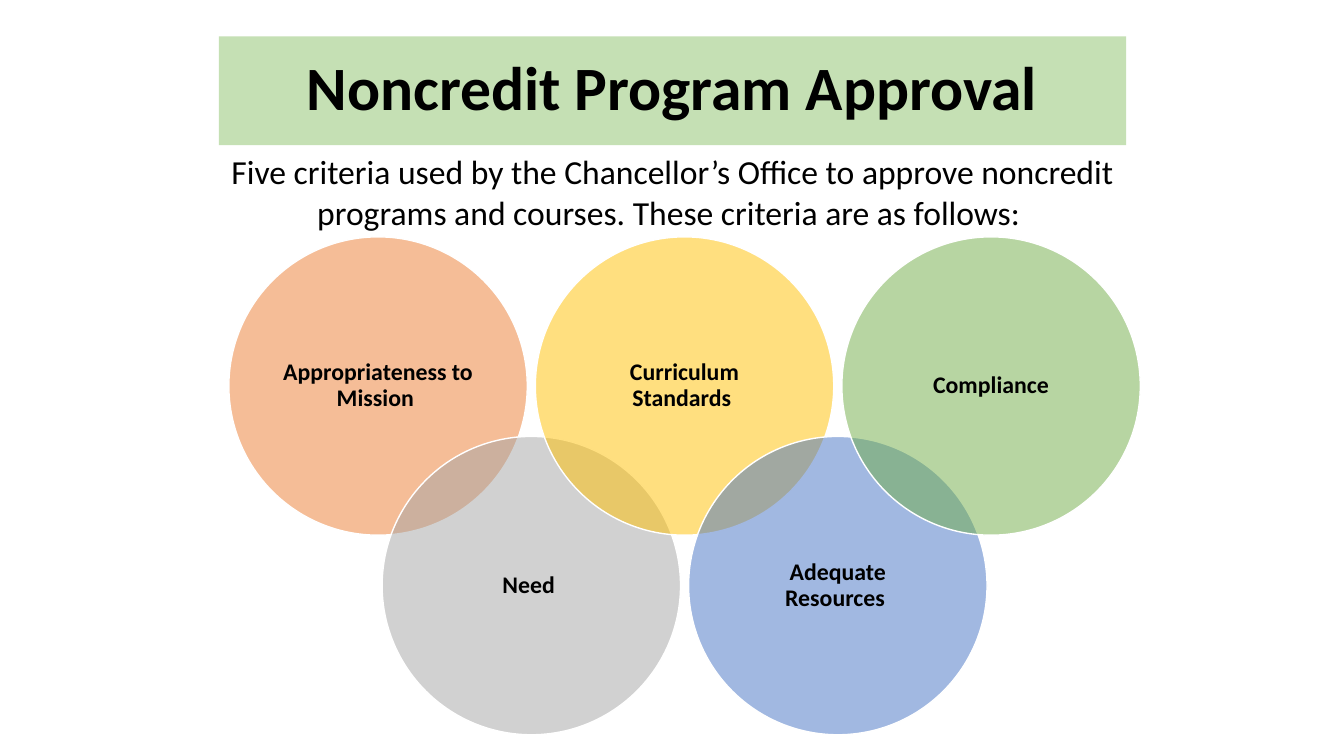
import dataclasses

import pptx
import pptx.dml.color
import pptx.enum.shapes
import pptx.enum.text
import pptx.oxml
import pptx.oxml.ns
import pptx.util

Inches = pptx.util.Inches
Pt = pptx.util.Pt


@dataclasses.dataclass(frozen=True)
class Theme:
    font: str = "Calibri"
    text: str = "000000"
    outline: str = "FFFFFF"
    banner: str = "C5E0B4"
    title_size: int = 44
    intro_size: int = 24
    label_size: int = 17
    opacity: int = 50  # percent


THEME = Theme()

# Circles interlock: even columns sit in the upper row, odd ones in the lower.
LEFT, TOP = 2.27, 2.35
COLUMN, ROW = 1.52, 1.98
DIAMETER = 2.96

CRITERIA = [
    ("Appropriateness to Mission ", "ED7D31"),
    ("Need ", "A5A5A5"),
    ("Curriculum Standards ", "FFC000"),
    ("Adequate Resources ", "4472C4"),
    ("Compliance", "70AD47"),
]


def rgb(value):
    return pptx.dml.color.RGBColor.from_string(value)


def place(s, left, top, width, height):
    s.left, s.top = Inches(left), Inches(top)
    s.width, s.height = Inches(width), Inches(height)


def fill_solid(s, color):
    s.fill.solid()
    s.fill.fore_color.rgb = rgb(color)


def set_opacity(s, percent):
    color = s.element.spPr.find(".//" + pptx.oxml.ns.qn("a:srgbClr"))
    alpha = pptx.oxml.parse_xml(
        f'<a:alpha {pptx.oxml.ns.nsdecls("a")} val="{percent * 1000}"/>')
    color.append(alpha)


def write(s, text, size, anchor, bold=False, spacing=1.0):
    tf = s.text_frame
    tf.word_wrap = True
    tf.vertical_anchor = anchor
    p = tf.paragraphs[0]
    p.text = text
    p.alignment = pptx.enum.text.PP_ALIGN.CENTER
    p.line_spacing = spacing
    p.font.name = THEME.font
    p.font.size = Pt(size)
    p.font.bold = bold
    p.font.color.rgb = rgb(THEME.text)


def add_title(slide, text):
    s = slide.shapes.title
    place(s, 2.17, 0.36, 9, 1.08)
    fill_solid(s, THEME.banner)
    write(s, text, THEME.title_size, pptx.enum.text.MSO_ANCHOR.MIDDLE,
          bold=True, spacing=0.9)


def add_intro(slide, text):
    s = slide.shapes.add_textbox(0, 0, 0, 0)
    place(s, 1.92, 1.45, 9.5, 0.91)
    write(s, text, THEME.intro_size, pptx.enum.text.MSO_ANCHOR.TOP)


def add_circle(slide, column, label, color):
    s = slide.shapes.add_shape(
        pptx.enum.shapes.MSO_SHAPE.OVAL, 0, 0, 0, 0)
    place(s, LEFT + column * COLUMN, TOP + column % 2 * ROW,
          DIAMETER, DIAMETER)
    s.shadow.inherit = False
    fill_solid(s, color)
    set_opacity(s, THEME.opacity)
    s.line.color.rgb = rgb(THEME.outline)
    s.line.width = Pt(1)
    tf = s.text_frame
    tf.margin_left = tf.margin_right = Inches(0.07)
    tf.margin_top = tf.margin_bottom = Inches(0.07)
    write(s, label, THEME.label_size, pptx.enum.text.MSO_ANCHOR.MIDDLE,
          bold=True, spacing=0.9)


def main():
    prs = pptx.Presentation()
    prs.slide_width, prs.slide_height = Inches(13.33), Inches(7.5)
    slide = prs.slides.add_slide(prs.slide_layouts.get_by_name("Title Only"))
    add_title(slide, "Noncredit Program Approval")
    for column, (label, color) in enumerate(CRITERIA):
        add_circle(slide, column, label, color)
    add_intro(slide, "Five criteria used by the Chancellor’s Office to approve "
                     "noncredit programs and courses. These criteria are as "
                     "follows: ")
    prs.save("out.pptx")


if __name__ == "__main__":
    main()
